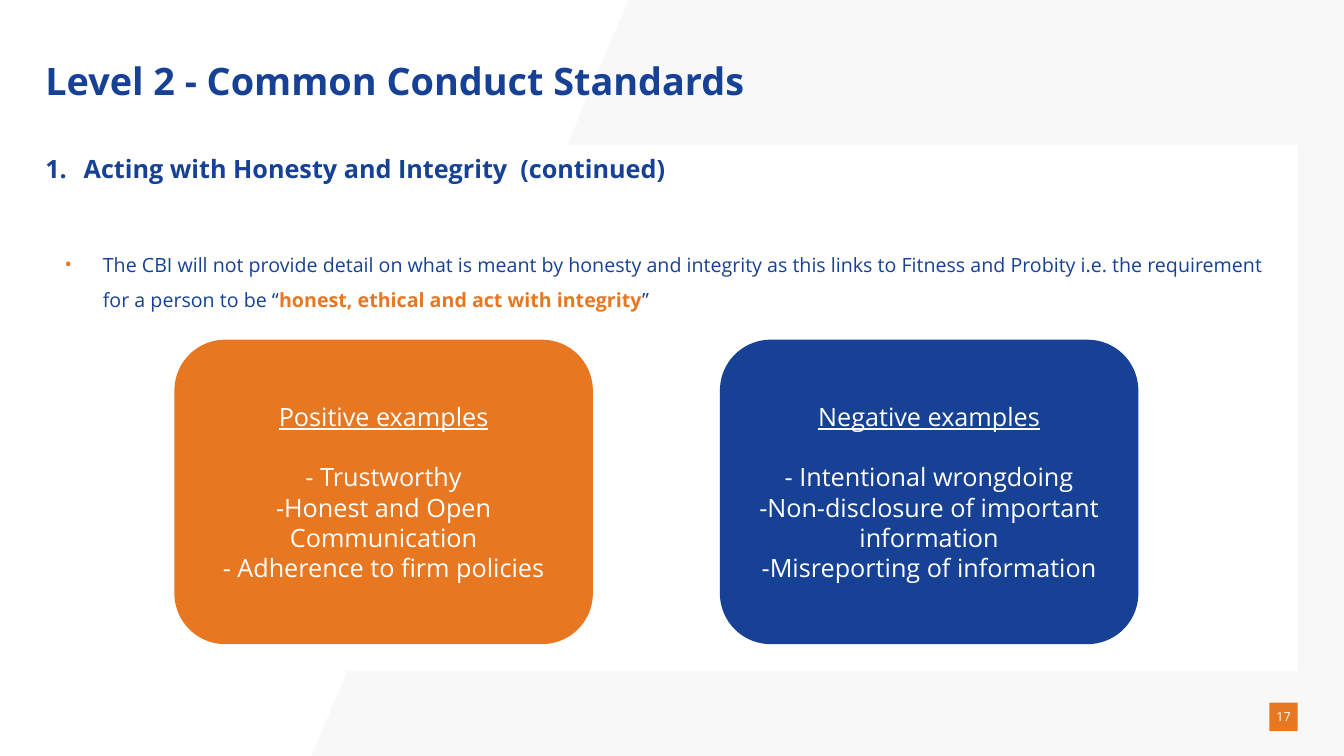
from lxml.etree import SubElement
from pptx import Presentation
from pptx.dml.color import RGBColor
from pptx.enum.shapes import MSO_SHAPE
from pptx.enum.text import MSO_ANCHOR, PP_ALIGN
from pptx.oxml.ns import qn
from pptx.util import Inches, Pt

ORANGE, BLUE, WHITE, PALE = "E87722", "164194", "FFFFFF", "F8F8F8"
CARD_TOP, CARD_WIDTH, CARD_HEIGHT = 3.37, 4.15, 3.02
CARDS = [
    (1.73, ORANGE, "Positive examples",
     ["- Trustworthy", "-Honest and Open Communication", "- Adherence to firm policies"]),
    (7.14, BLUE, "Negative examples",
     ["- Intentional wrongdoing", "-Non-disclosure of important information",
      "-Misreporting of information"]),
]


def rgb(color):
    return RGBColor.from_string(color)


def style(font, size, color, bold=False):
    font.name, font.size, font.bold = "Open Sans", Pt(size), bold
    font.color.rgb = rgb(color)


def fill_plain(shape, color):
    shape.shadow.inherit = False
    shape.fill.solid()
    shape.fill.fore_color.rgb = rgb(color)
    shape.line.fill.background()


def add_block(slide, preset, left, top, width, height, color):
    block = slide.shapes.add_shape(
        preset, Inches(left), Inches(top), Inches(width), Inches(height))
    fill_plain(block, color)
    return block


def add_backdrop(slide):
    outline = slide.shapes.build_freeform(Inches(3.09), Inches(7.5))
    outline.add_line_segments(
        [(Inches(x), Inches(y)) for x, y in [(6.23, 0), (13.33, 0), (13.33, 7.5)]])
    fill_plain(outline.convert_to_shape(), PALE)


def add_page_number(slide, number):
    badge = add_block(slide, MSO_SHAPE.RECTANGLE, 12.59, 6.97, 0.28, 0.28, ORANGE)
    frame = badge.text_frame
    frame.margin_left = frame.margin_right = frame.margin_top = frame.margin_bottom = 0
    frame.word_wrap = False
    frame.vertical_anchor = MSO_ANCHOR.MIDDLE
    label = frame.paragraphs[0]
    label.text = number
    label.alignment = PP_ALIGN.CENTER
    style(label.font, 9, WHITE)


def add_title(slide, text):
    box = slide.shapes.add_textbox(Inches(0.45), Inches(0.57), Inches(9.66), Inches(1.13))
    frame = box.text_frame
    frame.word_wrap = True
    frame.margin_left = 0
    title = frame.paragraphs[0]
    title.text = text
    title.line_spacing = 0.9
    style(title.font, 27, BLUE, bold=True)


def set_marker(paragraph, indent, tag, color=None, **attributes):
    """Give the paragraph a hanging indent and a bullet or number."""
    properties = paragraph._p.get_or_add_pPr()
    properties.set("marL", str(Inches(indent)))
    properties.set("indent", str(Inches(-0.38)))
    if color:
        SubElement(SubElement(properties, qn("a:buClr")), qn("a:srgbClr"), val=color)
    SubElement(properties, qn("a:buFont"), typeface="Open Sans")
    SubElement(properties, qn(tag), **attributes)
    paragraph.alignment = PP_ALIGN.LEFT


def add_body(slide):
    panel = add_block(slide, MSO_SHAPE.RECTANGLE, 0.45, 1.45, 12.42, 5.2, WHITE)
    panel.line.color.rgb = rgb(WHITE)
    panel.line.width = Pt(1)
    frame = panel.text_frame
    frame.word_wrap = True
    frame.margin_left = 0
    frame.vertical_anchor = MSO_ANCHOR.TOP

    heading = frame.paragraphs[0]
    set_marker(heading, 0.38, "a:buAutoNum", type="arabicPeriod")
    heading.text = "Acting with Honesty and Integrity  (continued)"
    heading.line_spacing = 1.07
    style(heading.font, 18, BLUE, bold=True)

    point = frame.add_paragraph()
    set_marker(point, 0.57, "a:buChar", ORANGE, char="•")
    point.line_spacing = 1.5
    point.space_before = Pt(41)
    for text, color, bold in [
        ("The CBI will not provide detail on what is meant by honesty and integrity as this "
         "links to Fitness and Probity i.e. the requirement for a person to be “", BLUE, False),
        ("honest, ethical and act with integrity", ORANGE, True),
        ("”", BLUE, False),
    ]:
        run = point.add_run()
        run.text = text
        style(run.font, 14, color, bold)


def add_card(slide, left, color, heading, examples):
    card = add_block(slide, MSO_SHAPE.ROUNDED_RECTANGLE,
                     left, CARD_TOP, CARD_WIDTH, CARD_HEIGHT, color)
    frame = card.text_frame
    frame.word_wrap = True
    frame.vertical_anchor = MSO_ANCHOR.MIDDLE
    frame.text = "\n".join([heading, *examples])
    for line in frame.paragraphs:
        line.alignment = PP_ALIGN.CENTER
        style(line.font, 18, WHITE)
    frame.paragraphs[0].font.underline = True
    frame.paragraphs[1].space_before = Pt(21.5)


def main():
    deck = Presentation()
    deck.slide_width, deck.slide_height = Inches(13.33), Inches(7.5)
    slide = deck.slides.add_slide(deck.slide_layouts[6])
    add_backdrop(slide)
    add_page_number(slide, "17")
    add_body(slide)
    add_title(slide, "Level 2 - Common Conduct Standards")
    for card in CARDS:
        add_card(slide, *card)
    deck.save("out.pptx")


if __name__ == "__main__":
    main()
